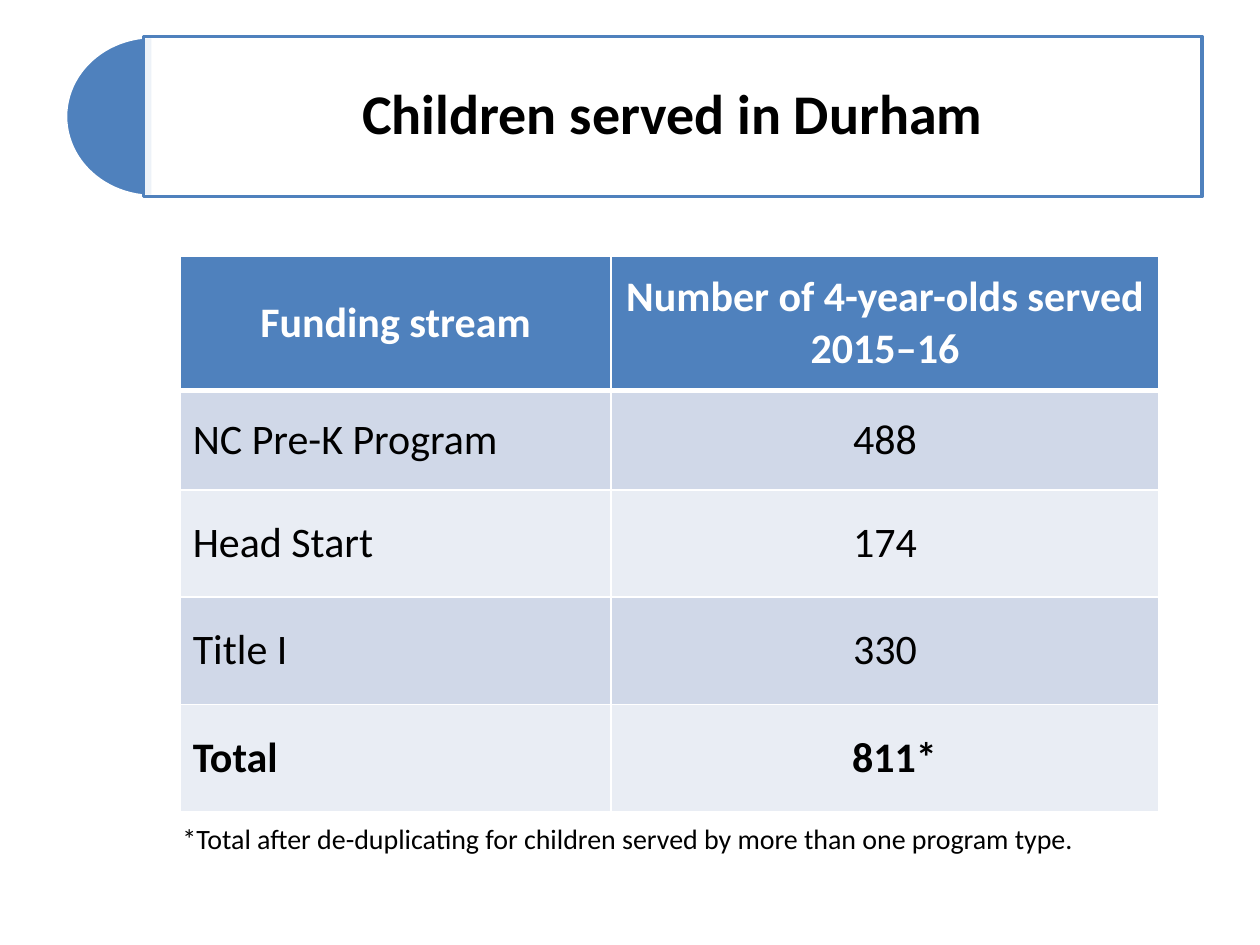
from lxml import etree
from pptx import Presentation, util as u
from pptx.dml.color import RGBColor
from pptx.enum import shapes, text
from pptx.oxml import ns

BLUE, WHITE, BLACK = "4F81BD", "FFFFFF", "000000"
BANDS = ("D0D8E8", "E9EDF4")
CENTER, LEFT = text.PP_ALIGN.CENTER, text.PP_ALIGN.LEFT


def rgb(value):
    return RGBColor.from_string(value)


def add_fill(parent, color):
    fill = etree.SubElement(parent, ns.qn("a:solidFill"))
    return etree.SubElement(fill, ns.qn("a:srgbClr"), val=color)


def set_borders(cell, bottom):
    """Draw white borders; bottom is the width of the lower one in points."""
    tcPr = cell._tc.get_or_add_tcPr()
    for i, (side, width) in enumerate(zip("LRTB", (1, 1, 1, bottom))):
        ln = etree.Element(ns.qn(f"a:ln{side}"), w=str(u.Pt(width)))
        add_fill(ln, WHITE)
        tcPr.insert(i, ln)


class Deck:
    def __init__(self, s, font="Calibri"):
        self.s, self.font = s, font

    def add_text(self, tf, words, size, color=BLACK, bold=False, align=LEFT):
        p = tf.paragraphs[0]
        p.alignment = align
        r = p.add_run()
        r.text = words
        r.font.name, r.font.size, r.font.bold = self.font, u.Pt(size), bold
        r.font.color.rgb = rgb(color)
        return p

    def shape(self, kind, box, fill, line):
        sp = self.s.shapes.add_shape(kind, *map(u.Inches, box))
        sp.shadow.inherit = False
        sp.fill.solid()
        sp.fill.fore_color.rgb = rgb(fill)
        sp.line.color.rgb = rgb(line)
        sp.line.width = u.Pt(2)
        return sp

    def half_disc(self, box):
        sp = self.shape(shapes.MSO_SHAPE.PIE, box, BLUE, WHITE)
        sp.adjustments[0], sp.adjustments[1] = 54, 162

    def title(self, box, words):
        sp = self.shape(shapes.MSO_SHAPE.RECTANGLE, box, WHITE, BLUE)
        color = sp._element.spPr.find(ns.qn("a:solidFill"))[0]
        etree.SubElement(color, ns.qn("a:alpha"), val="90000")
        tf = sp.text_frame
        tf.word_wrap = True
        tf.vertical_anchor = text.MSO_ANCHOR.MIDDLE
        tf.margin_left = tf.margin_right = u.Inches(0.13)
        tf.margin_top = tf.margin_bottom = u.Inches(0.13)
        self.add_text(tf, words, 32, bold=True, align=CENTER).line_spacing = 0.9

    def note(self, box, words):
        tf = self.s.shapes.add_textbox(*map(u.Inches, box)).text_frame
        tf.word_wrap = True
        self.add_text(tf, words, 16)

    def table(self, left, top, widths, heights, rows):
        """Add a table with a header row, banded rows and a bold last row."""
        box = left, top, sum(widths), sum(heights)
        table = self.s.shapes.add_table(
            len(rows), len(widths), *map(u.Inches, box)).table
        for col, width in zip(table.columns, widths):
            col.width = u.Inches(width)
        for i, (height, row) in enumerate(zip(heights, rows)):
            table.rows[i].height = u.Inches(height)
            header, last = i == 0, i == len(rows) - 1
            for j, words in enumerate(row):
                cell = table.cell(i, j)
                cell.vertical_anchor = text.MSO_ANCHOR.MIDDLE
                cell.fill.solid()
                cell.fill.fore_color.rgb = rgb(BLUE if header else BANDS[(i - 1) % 2])
                set_borders(cell, 3 if header else 1)
                self.add_text(cell.text_frame, words, 24, WHITE if header else BLACK,
                              header or last, CENTER if header or j else LEFT)
        return table


def main():
    prs = Presentation()
    prs.slide_width, prs.slide_height = u.Inches(10), u.Inches(7.5)
    deck = Deck(prs.slides.add_slide(prs.slide_layouts[6]))

    deck.half_disc((0.52, 0.29, 1.39, 1.27))
    deck.title((1.14, 0.29, 8.4, 1.27), "Children served in Durham")
    table = deck.table(1.43, 2.03, (3.42, 4.35), (1.07, 0.79, 0.85, 0.85, 0.85), (
        ("Funding stream", "Number of 4-year-olds served 2015‒16"),
        ("NC Pre-K Program", "488"),
        ("Head Start", "174"),
        ("Title I", "330"),
        ("Total", "811*"),
    ))
    # Keeps the total's digits in line with the figures above
    table.cell(4, 1).margin_left = u.Inches(0.25)
    deck.note((1.35, 6.47, 7.86, 0.37),
              "*Total after de-duplicating for children served by more than one program type.")

    prs.save("out.pptx")


if __name__ == "__main__":
    main()
